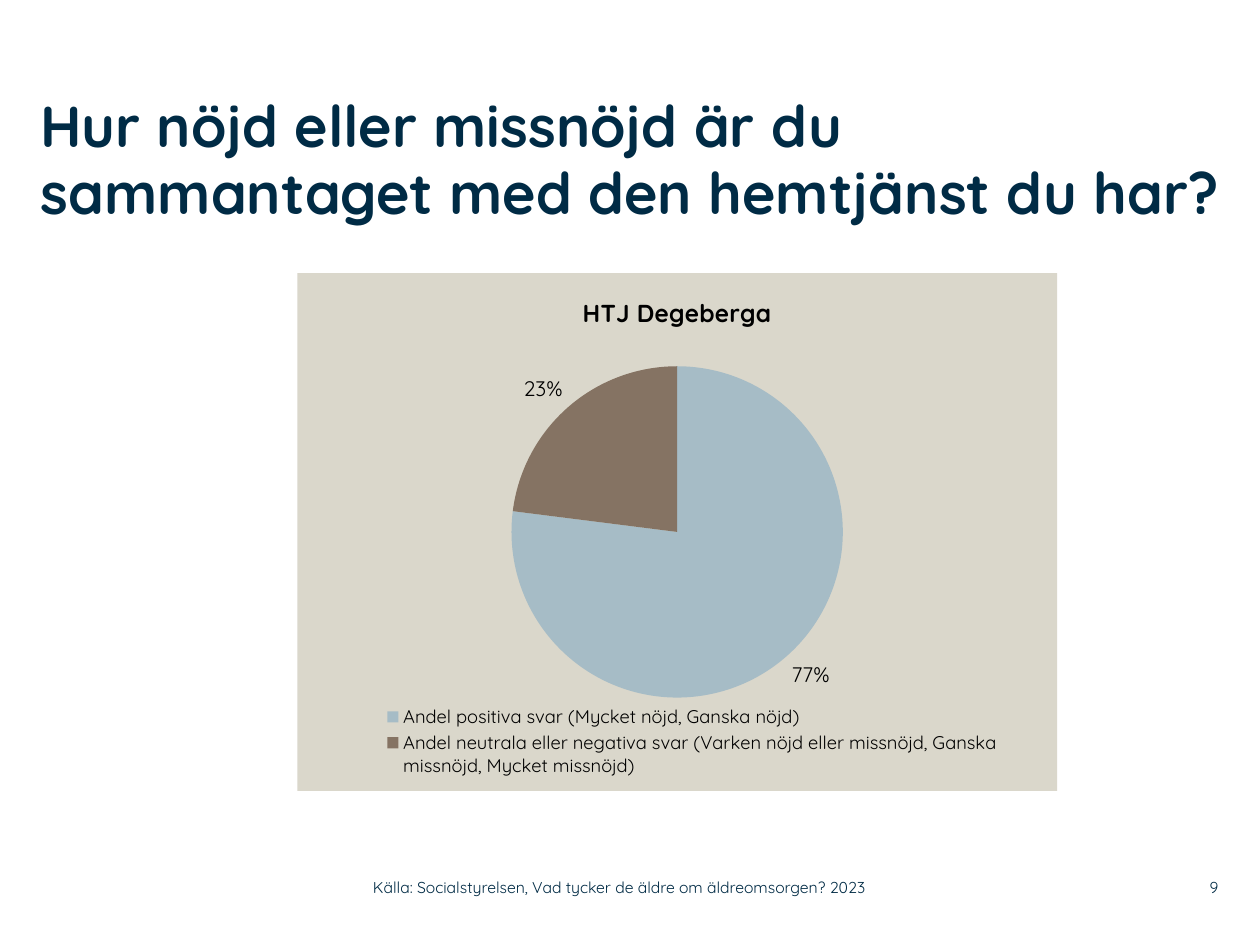
from dataclasses import dataclass

from pptx import Presentation
from pptx.chart.data import CategoryChartData
from pptx.dml.color import RGBColor
from pptx.enum.chart import XL_CHART_TYPE, XL_LABEL_POSITION, XL_LEGEND_POSITION
from pptx.enum.text import MSO_ANCHOR, MSO_AUTO_SIZE, PP_ALIGN
from pptx.oxml import parse_xml
from pptx.oxml.ns import nsdecls
from pptx.util import Inches, Pt


@dataclass(frozen=True)
class Theme:
    face: str = "Quicksand"
    navy: str = "002B45"
    black: str = "000000"
    sand: str = "DAD7CB"
    blue: str = "A6BCC6"
    brown: str = "857363"
    head: float = 33
    name: float = 14
    label: float = 12
    key: float = 10.5
    note: float = 9


class Deck:
    """Builds slide elements in one style, placed by shares of the slide."""

    def __init__(self, theme, wide, high):
        self.theme = theme
        self.file = Presentation()
        self.file.slide_width = Inches(wide)
        self.file.slide_height = Inches(high)
        self.slide = self.file.slides.add_slide(self.file.slide_layouts[5])

    def box(self, left, top, wide, high):
        across, down = self.file.slide_width, self.file.slide_height
        return [int(part * size) for part, size in
                zip((left, top, wide, high), (across, down) * 2)]

    def style(self, font, size, color, bold=False):
        form = {"name": self.theme.face, "size": Pt(size), "bold": bold}
        for key, value in form.items():
            setattr(font, key, value)
        font.color.rgb = RGBColor.from_string(color)

    def frame(self, shape, anchor, align):
        frame = shape.text_frame
        form = {"margin_left": 0, "margin_top": 0, "margin_right": 0,
                "margin_bottom": 0, "word_wrap": True,
                "auto_size": MSO_AUTO_SIZE.NONE, "vertical_anchor": anchor}
        for key, value in form.items():
            setattr(frame, key, value)
        line = frame.paragraphs[0]
        line.alignment = align
        return line

    def title(self, lines, area):
        shape = self.slide.shapes.title
        sides = ("left", "top", "width", "height")
        for side, value in zip(sides, self.box(*area)):
            setattr(shape, side, value)
        para = self.frame(shape, MSO_ANCHOR.TOP, PP_ALIGN.LEFT)
        para.line_spacing = 0.96
        for row, text in enumerate(lines):
            if row:
                para.add_line_break()
            run = para.add_run()
            run.text = text
            self.style(run.font, self.theme.head, self.theme.navy, True)

    def note(self, text, area, align=PP_ALIGN.LEFT):
        shape = self.slide.shapes.add_textbox(*self.box(*area))
        run = self.frame(shape, MSO_ANCHOR.MIDDLE, align).add_run()
        run.text = text
        self.style(run.font, self.theme.note, self.theme.navy)

    def place(self, node, area, inner=""):
        for old in node.findall("{*}layout"):
            node.remove(old)
        modes = "".join(f'<c:{k}Mode val="edge"/>' for k in "xy")
        sizes = "".join(f'<c:{k} val="{v}"/>' for k, v in zip("xywh", area))
        return parse_xml(f'<c:layout {nsdecls("c")}><c:manualLayout>'
                         f'{inner}{modes}{sizes}</c:manualLayout></c:layout>')

    def pie(self, name, shares, colors, area, plot_area, key_area):
        data = CategoryChartData()
        data.categories = list(shares)
        data.add_series(name, list(shares.values()))
        chart = self.slide.shapes.add_chart(
            XL_CHART_TYPE.PIE, *self.box(*area), data).chart
        theme = self.theme
        self.style(chart.font, 18, theme.black)

        chart.has_title = True
        run = chart.chart_title.text_frame.paragraphs[0].add_run()
        run.text = name
        self.style(run.font, theme.name, theme.black, True)

        chart.has_legend = True
        chart.legend.position = XL_LEGEND_POSITION.BOTTOM
        chart.legend.include_in_layout = False
        self.style(chart.legend.font, theme.key, theme.black)

        plot = chart.plots[0]
        plot.vary_by_categories = True
        for spot, color in enumerate(colors):
            fill = plot.series[0].points[spot].format.fill
            fill.solid()
            fill.fore_color.rgb = RGBColor.from_string(color)
        plot.has_data_labels = True
        labels = plot.data_labels
        form = {"show_percentage": True, "show_value": False,
                "number_format": "0%", "number_format_is_linked": False,
                "position": XL_LABEL_POSITION.OUTSIDE_END}
        for key, value in form.items():
            setattr(labels, key, value)
        self.style(labels.font, theme.label, theme.black)

        root = chart.element
        field = root.find(".//{*}plotArea")
        field.insert(0, self.place(field, plot_area,
                                   '<c:layoutTarget val="inner"/>'))
        legend = root.find(".//{*}legend")
        legend.insert(1, self.place(legend, key_area))
        root.find("{*}chart").addnext(parse_xml(
            f'<c:spPr {nsdecls("c", "a")}><a:solidFill>'
            f'<a:srgbClr val="{theme.sand}"/></a:solidFill>'
            '<a:ln><a:noFill/></a:ln></c:spPr>'))


def main():
    theme = Theme()
    deck = Deck(theme, 10, 7.5)
    deck.title(["Hur nöjd eller missnöjd är du",
                "sammantaget med den hemtjänst du har?"],
               (0.032, 0.1, 0.95, 0.19))
    deck.pie("HTJ Degeberga",
             {"Andel positiva svar (Mycket nöjd, Ganska nöjd)": 77,
              "Andel neutrala eller negativa svar (Varken nöjd eller "
              "missnöjd, Ganska missnöjd, Mycket missnöjd)": 23},
             [theme.blue, theme.brown],
             area=(0.236, 0.289, 0.603, 0.548),
             plot_area=(0.28, 0.18, 0.44, 0.64),
             key_area=(0.11, 0.83, 0.82, 0.15))
    deck.note("Källa: Socialstyrelsen, Vad tycker de äldre om "
              "äldreomsorgen? 2023", (0.296, 0.919, 0.443, 0.039))
    deck.note("9", (0.92, 0.919, 0.047, 0.039), PP_ALIGN.RIGHT)
    deck.file.save("out.pptx")


if __name__ == "__main__":
    main()
